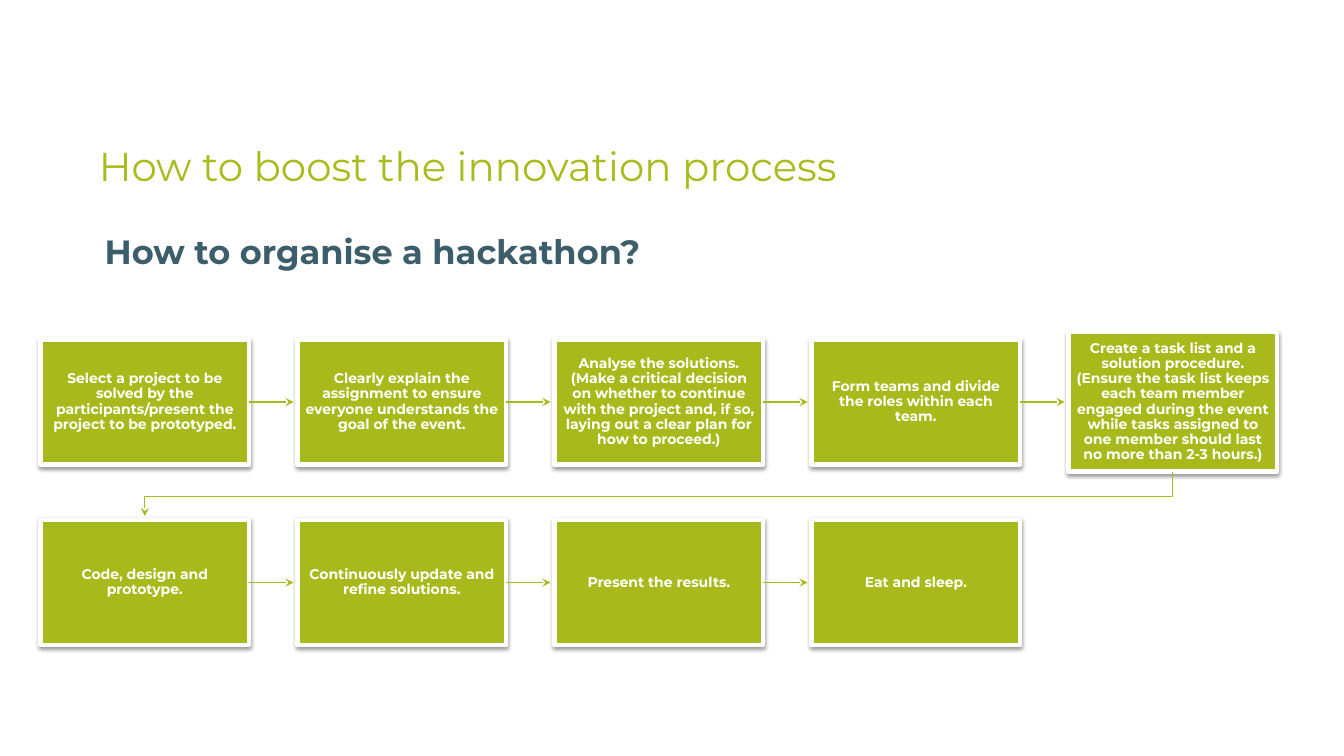
from dataclasses import dataclass
from itertools import pairwise

from lxml.etree import SubElement
from pptx import Presentation
from pptx.dml.color import RGBColor
from pptx.enum.shapes import MSO_CONNECTOR, MSO_SHAPE
from pptx.enum.text import MSO_ANCHOR, PP_ALIGN
from pptx.oxml.ns import qn
from pptx.util import Cm, Pt

COLOURS = {
    "title": "AABB1D",
    "subtitle": "3C5D6A",
    "box": "A8BA1B",
    "white": "FFFFFF",
    "shadow": "000000",
}
FONT = "Montserrat"

# Flow grid, in centimetres
GRID_LEFT, COLUMN_PITCH = 1.02, 6.477
BOX_WIDTH, BOX_HEIGHT, TALL_BOX_HEIGHT = 5.26, 3.15, 3.51
ROW_CENTRES = (10.13, 14.68)
ARROW_GAP = 0.1
TURN_Y = 12.5


@dataclass(frozen=True)
class Step:
    text: str
    row: int
    column: int
    height: float = BOX_HEIGHT

    @property
    def left(self) -> float:
        return GRID_LEFT + self.column * COLUMN_PITCH

    @property
    def centre_x(self) -> float:
        return self.left + BOX_WIDTH / 2

    @property
    def centre_y(self) -> float:
        return ROW_CENTRES[self.row]

    @property
    def top(self) -> float:
        return self.centre_y - self.height / 2


STEPS = (
    Step("Select a project to be solved by the participants/present the "
         "project to be prototyped.", 0, 0),
    Step("Clearly explain the assignment to ensure everyone understands "
         "the goal of the event.", 0, 1),
    Step("Analyse the solutions. (Make a critical decision on whether to "
         "continue with the project and, if so, laying out a clear plan "
         "for how to proceed.)", 0, 2),
    Step("Form teams and divide the roles within each team.", 0, 3),
    Step("Create a task list and a solution procedure. (Ensure the task "
         "list keeps each team member engaged during the event while tasks "
         "assigned to one member should last no more than 2-3 hours.)",
         0, 4, TALL_BOX_HEIGHT),
    Step("Code, design and prototype.", 1, 0),
    Step("Continuously update and refine solutions.", 1, 1),
    Step("Present the results.", 1, 2),
    Step("Eat and sleep.", 1, 3),
)


def colour(name: str) -> RGBColor:
    return RGBColor.from_string(COLOURS[name])


def write_text(shape, text: str, *, size: float, color: str, bold: bool = False,
               align=PP_ALIGN.LEFT, anchor=MSO_ANCHOR.TOP, line_spacing: float = 1.0,
               inset_x: float = 0.25, inset_y: float = 0.13, indent: float = 0) -> None:
    frame = shape.text_frame
    frame.word_wrap = True
    frame.vertical_anchor = anchor
    frame.margin_left = frame.margin_right = Cm(inset_x)
    frame.margin_top = frame.margin_bottom = Cm(inset_y)
    paragraph = frame.paragraphs[0]
    paragraph.alignment = align
    paragraph.line_spacing = line_spacing
    if indent:
        paragraph._p.get_or_add_pPr().set("marL", str(Cm(indent)))
    run = paragraph.add_run()
    run.text = text
    run.font.name = FONT
    run.font.size = Pt(size)
    run.font.bold = bold
    run.font.color.rgb = colour(color)


def add_shadow(shape) -> None:
    shape.shadow.inherit = False
    effects = shape._element.spPr.find(qn("a:effectLst"))
    shadow = SubElement(effects, qn("a:outerShdw"), blurRad=str(Pt(3.1)),
                        dist=str(Pt(1.6)), dir="5400000", rotWithShape="0")
    shade = SubElement(shadow, qn("a:srgbClr"), val=COLOURS["shadow"])
    SubElement(shade, qn("a:alpha"), val="38000")


def add_step(slide, step: Step):
    box = slide.shapes.add_shape(MSO_SHAPE.RECTANGLE, Cm(step.left), Cm(step.top),
                                 Cm(BOX_WIDTH), Cm(step.height))
    box.fill.solid()
    box.fill.fore_color.rgb = colour("box")
    box.line.color.rgb = colour("white")
    box.line.width = Pt(3)
    add_shadow(box)
    write_text(box, step.text, size=10, color="white", bold=True,
               align=PP_ALIGN.CENTER, anchor=MSO_ANCHOR.MIDDLE, line_spacing=0.9,
               inset_x=0.2, inset_y=0.2)
    return box


def style_arrow(arrow) -> None:
    arrow.line.color.rgb = colour("box")
    arrow.line.width = Pt(0.75)
    SubElement(arrow.line._get_or_add_ln(), qn("a:tailEnd"), type="stealth")


def add_straight_arrow(slide, start: Step, end: Step, start_box) -> None:
    y = Cm(start.centre_y)
    arrow = slide.shapes.add_connector(MSO_CONNECTOR.STRAIGHT, Cm(start.left + BOX_WIDTH), y,
                                       Cm(end.left - ARROW_GAP), y)
    arrow.begin_connect(start_box, 3)
    style_arrow(arrow)
    SubElement(arrow._element.spPr, qn("a:effectLst"))


def add_turning_arrow(slide, start: Step, end: Step) -> None:
    points = [
        (start.centre_x, start.top + start.height),
        (start.centre_x, TURN_Y),
        (end.centre_x, TURN_Y),
        (end.centre_x, end.top - ARROW_GAP),
    ]
    first, *others = [(Cm(x), Cm(y)) for x, y in points]
    builder = slide.shapes.build_freeform(*first)
    builder.add_line_segments(others, close=False)
    arrow = builder.convert_to_shape()
    arrow.fill.background()
    arrow.shadow.inherit = False
    style_arrow(arrow)


def main() -> None:
    presentation = Presentation()
    presentation.slide_width, presentation.slide_height = Cm(33.87), Cm(19.05)
    slide = presentation.slides.add_slide(presentation.slide_layouts[5])

    # Title and subtitle
    title = slide.shapes.title
    title.left, title.top, title.width, title.height = Cm(2.24), Cm(3.53), Cm(28.14), Cm(1.45)
    write_text(title, "How to boost the innovation process", size=28.8, color="title",
               anchor=MSO_ANCHOR.MIDDLE, line_spacing=0.9)
    subtitle = slide.shapes.add_textbox(Cm(2.24), Cm(5.69), Cm(28.14), Cm(2.74))
    write_text(subtitle, "How to organise a hackathon?", size=24, color="subtitle",
               bold=True, align=PP_ALIGN.JUSTIFY, indent=0.15)

    # Process boxes
    boxes = [add_step(slide, step) for step in STEPS]

    # Arrows from each step to the next
    for (start, start_box), (end, _) in pairwise(zip(STEPS, boxes)):
        if start.row == end.row:
            add_straight_arrow(slide, start, end, start_box)
        else:
            add_turning_arrow(slide, start, end)

    presentation.save("out.pptx")


if __name__ == "__main__":
    main()
